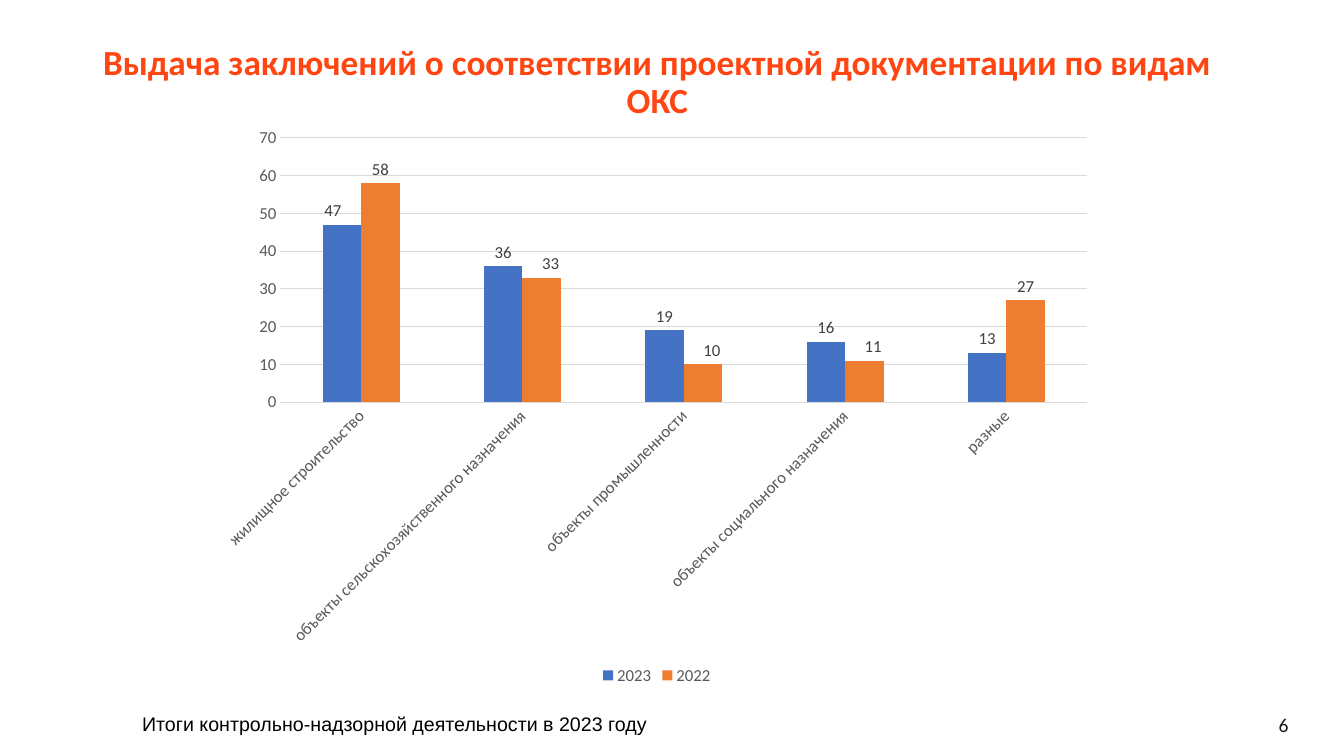
"""Build the slide on project conformity reports by type of building."""
from dataclasses import dataclass

import lxml.etree
import pptx
import pptx.chart.data
import pptx.dml.color
import pptx.enum.chart
import pptx.enum.text
import pptx.oxml
import pptx.oxml.ns
import pptx.util

SCALE = 9144
FACE = "Calibri"
HUES = {
    "title": "FF4612", "foot": "000000", "page": "1A1A1A", "axis": "595959",
    "grid": "D9D9D9", "value": "404040", "blue": "4472C4", "orange": "ED7D31",
}
KINDS = (
    "жилищное строительство",
    "объекты сельскохозяйственного назначения",
    "объекты промышленности",
    "объекты социального назначения",
    "разные",
)
Align = pptx.enum.text.PP_ALIGN
Anchor = pptx.enum.text.MSO_ANCHOR


@dataclass(frozen=True)
class Note:
    text: str
    box: tuple[int, int, int, int]
    face: str
    hue: str
    align: Align
    anchor: Anchor


@dataclass(frozen=True)
class Year:
    name: str
    counts: tuple[int, ...]
    hue: str
    shifts: dict[int, float]


NOTES = (
    Note("6", (1253, 707, 25, 24), FACE, "page", Align.RIGHT, Anchor.MIDDLE),
    Note("Итоги контрольно-надзорной деятельности в 2023 году",
         (141, 706, 1100, 24), "Arial", "foot", Align.LEFT, Anchor.TOP),
)
YEARS = (
    Year("2023", (47, 36, 19, 16, 13), "blue", {0: -0.01}),
    Year("2022", (58, 33, 10, 11, 27), "orange", {1: 0.01, 2: 0.01, 3: 0.01}),
)


def px(size: int) -> pptx.util.Emu:
    return pptx.util.Emu(size * SCALE)


def tint(name: str) -> pptx.dml.color.RGBColor:
    return pptx.dml.color.RGBColor.from_string(HUES[name])


def style(font, size: float, hue: str, face: str = FACE) -> None:
    font.size = pptx.util.Pt(size)
    font.name = face
    font.color.rgb = tint(hue)


def layout(**parts: object) -> lxml.etree._Element:
    root = pptx.oxml.parse_xml(f"<c:layout {pptx.oxml.ns.nsdecls('c')}/>")
    inner = lxml.etree.SubElement(root, pptx.oxml.ns.qn("c:manualLayout"))
    for tag, val in parts.items():
        lxml.etree.SubElement(inner, pptx.oxml.ns.qn(f"c:{tag}")).set("val", str(val))
    return root


def add_note(slide, note: Note) -> None:
    frame = slide.shapes.add_textbox(*map(px, note.box)).text_frame
    frame.word_wrap = True
    frame.vertical_anchor = note.anchor
    frame.margin_left = frame.margin_right = 0
    frame.margin_top = frame.margin_bottom = 0
    line = frame.paragraphs[0]
    line.alignment = note.align
    run = line.add_run()
    run.text = note.text
    style(run.font, 14, note.hue, note.face)


def add_title(slide) -> None:
    title = slide.shapes.title
    title.left, title.top, title.width, title.height = map(px, (58, 44, 1188, 76))
    frame = title.text_frame
    frame.word_wrap = True
    frame.auto_size = pptx.enum.text.MSO_AUTO_SIZE.NONE
    frame.vertical_anchor = Anchor.MIDDLE
    line = frame.paragraphs[0]
    line.alignment = Align.CENTER
    line.line_spacing = 0.9
    run = line.add_run()
    run.text = "Выдача заключений о соответствии проектной документации по видам ОКС"
    style(run.font, 25.2, "title")
    run.font.bold = True


def style_bars(bars, year: Year) -> None:
    bars.format.fill.solid()
    bars.format.fill.fore_color.rgb = tint(year.hue)
    bars.invert_if_negative = False
    marks = bars.data_labels
    marks.show_value = True
    marks.position = pptx.enum.chart.XL_LABEL_POSITION.OUTSIDE_END
    style(marks.font, 12, "value")
    for spot, shift in year.shifts.items():
        mark = bars.points[spot].data_label
        style(mark.font, 12, "value")
        mark.position = pptx.enum.chart.XL_LABEL_POSITION.OUTSIDE_END
        index = marks._element.xpath(f"c:dLbl/c:idx[@val='{spot}']")[0]
        index.addnext(layout(x=shift, y=0))


def style_axes(chart) -> None:
    for axis in (chart.category_axis, chart.value_axis):
        axis.major_tick_mark = pptx.enum.chart.XL_TICK_MARK.NONE
        axis.minor_tick_mark = pptx.enum.chart.XL_TICK_MARK.NONE
        style(axis.tick_labels.font, 12, "axis")
    base, side = chart.category_axis, chart.value_axis
    side.minimum_scale, side.maximum_scale, side.major_unit = 0, 70, 10
    side.has_major_gridlines = True
    side.format.line.fill.background()
    for line in (base.format.line, side.major_gridlines.format.line):
        line.color.rgb = tint("grid")
        line.width = pptx.util.Pt(0.75)
    body = base._element.xpath("c:txPr/a:bodyPr")[0]
    body.set("rot", "-2700000")
    body.set("vert", "horz")


def add_bars(slide) -> None:
    data = pptx.chart.data.CategoryChartData()
    data.categories = KINDS
    for year in YEARS:
        data.add_series(year.name, year.counts)
    chart = slide.shapes.add_chart(
        pptx.enum.chart.XL_CHART_TYPE.COLUMN_CLUSTERED,
        *map(px, (207, 114, 889, 570)), data).chart
    chart.has_title = False
    style(chart.font, 10, "foot")
    plot = chart.plots[0]
    plot.gap_width, plot.overlap = 219, 0
    plot.vary_by_categories = False
    for bars, year in zip(plot.series, YEARS):
        style_bars(bars, year)
    style_axes(chart)
    chart.has_legend = True
    chart.legend.position = pptx.enum.chart.XL_LEGEND_POSITION.BOTTOM
    chart.legend.include_in_layout = False
    style(chart.legend.font, 12, "axis")
    area = chart._chartSpace.xpath("c:chart/c:plotArea")[0]
    for old in area.xpath("c:layout"):
        area.remove(old)
    area.insert(0, layout(layoutTarget="inner", xMode="edge", yMode="edge",
                          x=0.08, y=0.04, w=0.9, h=0.46))


def main() -> None:
    deck = pptx.Presentation()
    deck.slide_width, deck.slide_height = px(1333), px(750)
    slide = deck.slides.add_slide(deck.slide_layouts[5])
    for note in NOTES:
        add_note(slide, note)
    add_title(slide)
    add_bars(slide)
    deck.save("out.pptx")


if __name__ == "__main__":
    main()
